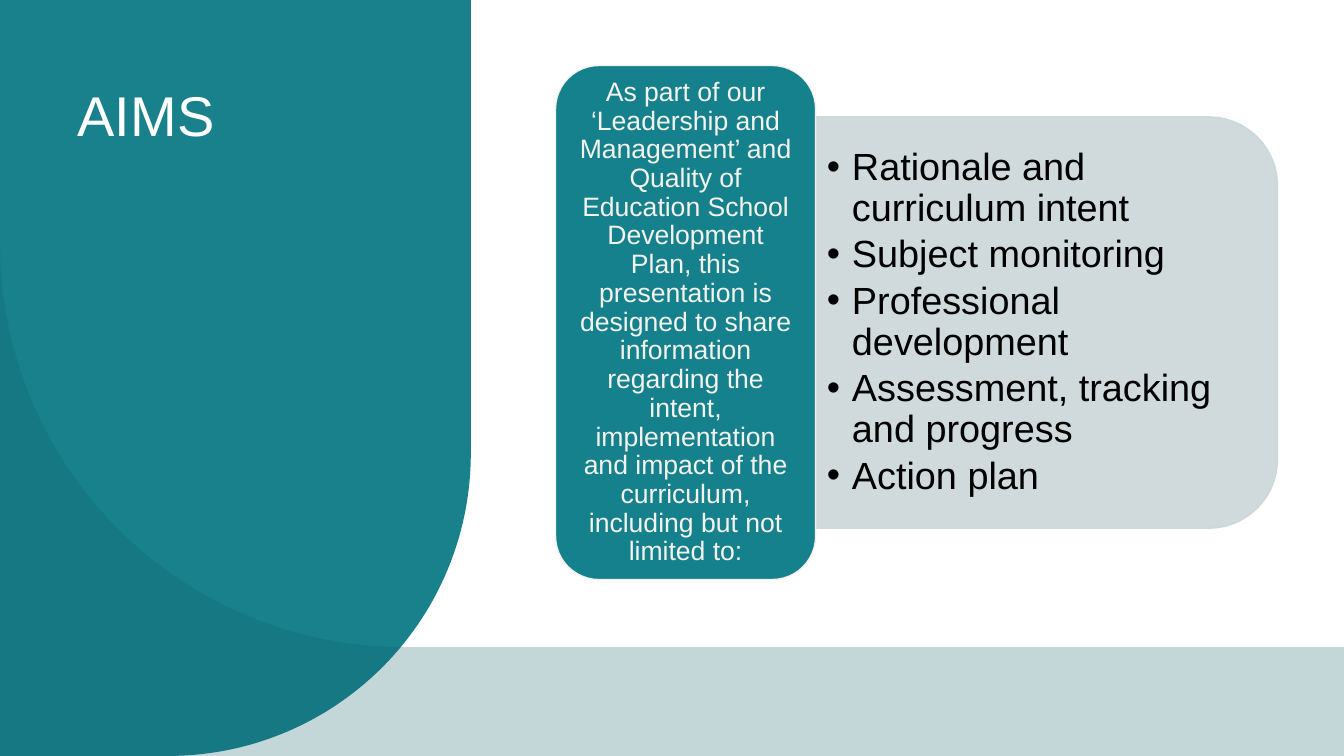
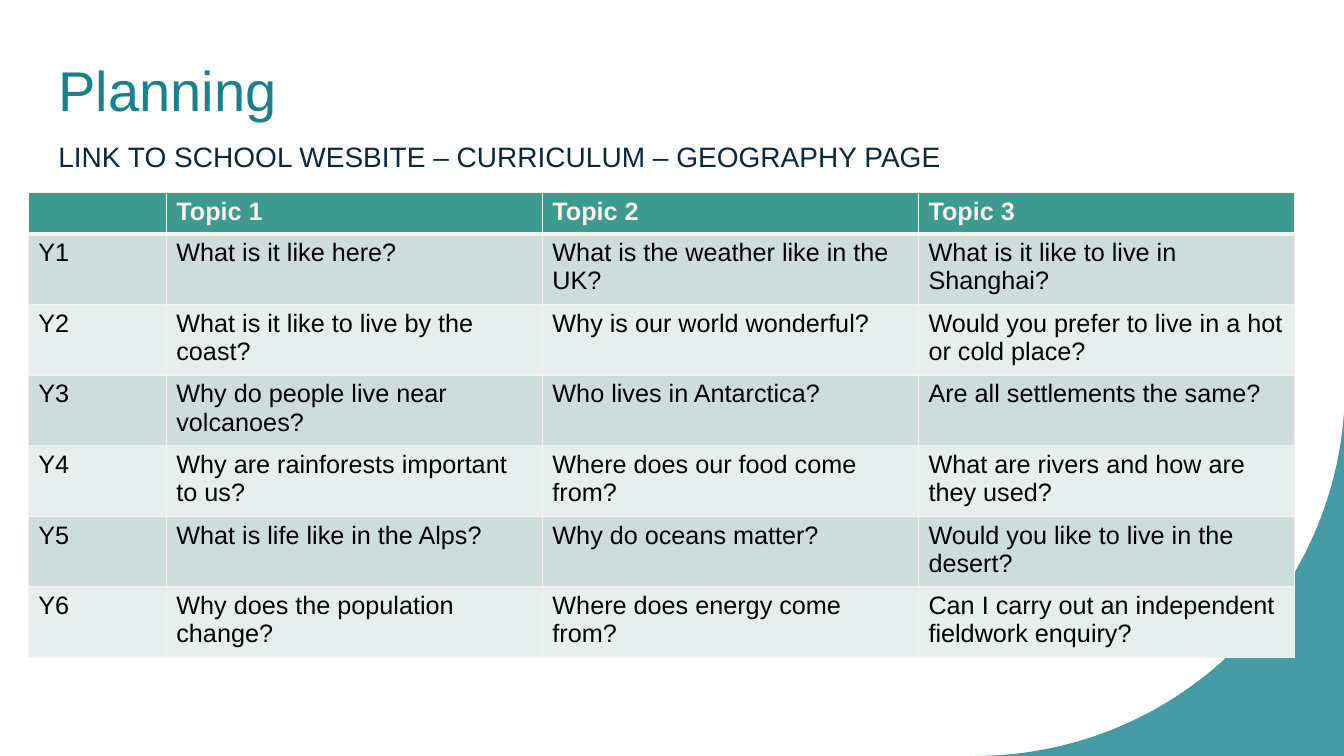
import dataclasses
import math

import lxml.etree
import pptx
import pptx.dml.color
import pptx.enum.shapes
import pptx.enum.text
import pptx.oxml.ns
import pptx.util

Inches = pptx.util.Inches
Pt = pptx.util.Pt
qn = pptx.oxml.ns.qn
Align = pptx.enum.text.PP_ALIGN
Anchor = pptx.enum.text.MSO_ANCHOR
Preset = pptx.enum.shapes.MSO_SHAPE


@dataclasses.dataclass(frozen=True)
class Theme:
    font: str = "Arial"
    white: str = "FFFFFF"
    black: str = "000000"
    teal: str = "18818C"
    dark_teal: str = "116069"
    card: str = "15818C"
    card_line: str = "F3F1EB"
    panel: str = "CBD7DA"
    cream: str = "F4F2EC"
    navy: str = "09283F"
    header: str = "3C9A8F"
    odd_row: str = "CDDDDB"
    even_row: str = "E7EFEE"
    title_size: int = 40
    aims_size: int = 27
    subtitle_size: int = 20
    intro_size: int = 19
    table_size: int = 18


theme = Theme()
WIDTH, HEIGHT = 13.33, 7.5


def paint(shape, colour, alpha=100, line=None):
    """Fill and outline a shape, with alpha as a percentage of opacity."""
    shape.shadow.inherit = False
    shape.fill.solid()
    shape.fill.fore_color.rgb = pptx.dml.color.RGBColor.from_string(colour)
    if line:
        shape.line.color.rgb = pptx.dml.color.RGBColor.from_string(line)
        shape.line.width = Pt(1)
    else:
        shape.line.fill.background()
    if alpha < 100:
        for element in shape._element.spPr.iter(qn("a:srgbClr")):
            lxml.etree.SubElement(element, qn("a:alpha"), val=str(alpha * 1000))


def write_text(frame, lines, size, colour, bold=False, frame_format=None, paragraph_format=None):
    """Write one paragraph per line, applying the format values to frame and paragraphs."""
    for name, value in (frame_format or {}).items():
        setattr(frame, name, value)
    for index, line in enumerate(lines):
        paragraph = frame.add_paragraph() if index else frame.paragraphs[0]
        for name, value in (paragraph_format or {}).items():
            setattr(paragraph, name, value)
        run = paragraph.add_run()
        run.text = line
        for name, value in {"name": theme.font, "size": Pt(size), "bold": bold}.items():
            setattr(run.font, name, value)
        run.font.color.rgb = pptx.dml.color.RGBColor.from_string(colour)


presentation = pptx.Presentation()
presentation.slide_width = Inches(WIDTH)
presentation.slide_height = Inches(HEIGHT)
title_only = presentation.slide_layouts[5]
aims_slide = presentation.slides.add_slide(title_only)
planning_slide = presentation.slides.add_slide(title_only)

# Curved backgrounds: circle centre, radius, arc in degrees, then the closing corners
backgrounds = [
    (aims_slide, (1.67, 4.5), 3, (0, 90), [(0, HEIGHT), (0, 0), (4.67, 0)], theme.teal, 100),
    (aims_slide, (4, 2.42), 4, (180, 90),
     [(WIDTH, 6.42), (WIDTH, HEIGHT), (0, HEIGHT)], theme.dark_teal, 25),
    (planning_slide, (9.67, 3.83), 3.67, (4, 90), [(WIDTH, HEIGHT)], theme.teal, 80),
]
ARC_STEPS = 60
for slide, (centre_x, centre_y), radius, (start, end), corners, colour, alpha in backgrounds:
    angles = [math.radians(start + (end - start) * step / ARC_STEPS) for step in range(ARC_STEPS + 1)]
    arc = [(centre_x + radius * math.cos(angle), centre_y + radius * math.sin(angle)) for angle in angles]
    points = [(Inches(x), Inches(y)) for x, y in arc + corners]
    builder = slide.shapes.build_freeform(*points[0])
    builder.add_line_segments(points[1:], close=True)
    paint(builder.convert_to_shape(), colour, alpha)

# Titles, brought in front of the backgrounds
titles = [
    (aims_slide, "AIMS", (0.67, 0.75, 3.67, 4.25), theme.white, Anchor.TOP),
    (planning_slide, "Planning", (0.48, 0.16, 10.84, 1.45), theme.teal, Anchor.MIDDLE),
]
for slide, text, box, colour, anchor in titles:
    title = slide.shapes.title
    for name, value in zip(("left", "top", "width", "height"), box):
        setattr(title, name, Inches(value))
    write_text(
        title.text_frame, [text], theme.title_size, colour,
        frame_format={"vertical_anchor": anchor, "auto_size": pptx.enum.text.MSO_AUTO_SIZE.NONE},
        paragraph_format={"alignment": Align.LEFT},
    )
    slide.shapes._spTree.append(title._element)

# Aims: bulleted panel beside the introduction card
panel = aims_slide.shapes.add_shape(
    Preset.ROUND_2_SAME_RECTANGLE, Inches(8.34), Inches(0.91), Inches(4.08), Inches(4.58))
panel.rotation = 90
panel.adjustments[0], panel.adjustments[1] = 0.167, 0
paint(panel, theme.panel, 90, theme.panel)

aims = [
    "Rationale and curriculum intent",
    "Subject monitoring",
    "Professional development",
    "Assessment, tracking and progress",
    "Action plan",
]
aims_box = aims_slide.shapes.add_textbox(Inches(8.09), Inches(1.36), Inches(4.38), Inches(3.68))
write_text(
    aims_box.text_frame, aims, theme.aims_size, theme.black,
    frame_format={
        "word_wrap": True, "vertical_anchor": Anchor.MIDDLE,
        "margin_left": Inches(0.11), "margin_right": Inches(0.11),
        "margin_top": Inches(0.06), "margin_bottom": Inches(0.06),
    },
    paragraph_format={"line_spacing": 0.9, "space_before": Pt(4)},
)
aims_box.text_frame.paragraphs[0].space_before = Pt(0)
for paragraph in aims_box.text_frame.paragraphs:
    properties = paragraph._p.get_or_add_pPr()
    properties.set("marL", str(Inches(0.25)))
    properties.set("indent", str(-Inches(0.25)))
    lxml.etree.SubElement(properties, qn("a:buFont"), typeface=theme.font)
    lxml.etree.SubElement(properties, qn("a:buChar"), char="•")

card = aims_slide.shapes.add_shape(
    Preset.ROUNDED_RECTANGLE, Inches(5.51), Inches(0.65), Inches(2.58), Inches(5.1))
card.adjustments[0] = 0.167
paint(card, theme.card, line=theme.card_line)
introduction = (
    "As part of our ‘Leadership and Management’ and Quality of Education School Development Plan, "
    "this presentation is designed to share information regarding the intent, implementation and "
    "impact of the curriculum, including but not limited to:"
)
write_text(
    card.text_frame, [introduction], theme.intro_size, theme.cream,
    frame_format={
        "word_wrap": True, "vertical_anchor": Anchor.MIDDLE,
        "margin_left": Inches(0.08), "margin_right": Inches(0.08),
        "margin_top": Inches(0.04), "margin_bottom": Inches(0.04),
    },
    paragraph_format={"alignment": Align.CENTER, "line_spacing": 0.9},
)

# Planning: subtitle and topic table
subtitle = planning_slide.shapes.add_textbox(Inches(0.48), Inches(1.27), Inches(10.84), Inches(0.6))
write_text(
    subtitle.text_frame, ["LINK TO SCHOOL WESBITE – CURRICULUM – GEOGRAPHY PAGE"],
    theme.subtitle_size, theme.navy,
    frame_format={"word_wrap": True}, paragraph_format={"line_spacing": 1.2},
)

topics = [
    ("", "Topic 1", "Topic 2", "Topic 3"),
    ("Y1", "What is it like here?", "What is the weather like in the UK?",
     "What is it like to live in Shanghai?"),
    ("Y2", "What is it like to live by the coast?", "Why is our world wonderful?",
     "Would you prefer to live in a hot or cold place?"),
    ("Y3", "Why do people live near volcanoes?", "Who lives in Antarctica?",
     "Are all settlements the same?"),
    ("Y4", "Why are rainforests important to us?", "Where does our food come from?",
     "What are rivers and how are they used?"),
    ("Y5", "What is life like in the Alps?", "Why do oceans matter?",
     "Would you like to live in the desert?"),
    ("Y6", "Why does the population change?", "Where does energy come from?",
     "Can I carry out an independent fieldwork enquiry?"),
]
column_widths = [1.37, 3.73, 3.73, 3.73]
row_heights = [0.41] + [0.66] * (len(topics) - 1)
table = planning_slide.shapes.add_table(
    len(topics), len(column_widths), Inches(0.28), Inches(1.91),
    Inches(sum(column_widths)), Inches(sum(row_heights))).table
for column, width in zip(table.columns, column_widths):
    column.width = Inches(width)
for row, height in zip(table.rows, row_heights):
    row.height = Inches(height)

for row_index, texts in enumerate(topics):
    is_header = row_index == 0
    fill = theme.header if is_header else theme.odd_row if row_index % 2 else theme.even_row
    border_widths = {"lnL": 1, "lnR": 1, "lnT": 3 if row_index == 1 else 1, "lnB": 3 if is_header else 1}
    for column_index, text in enumerate(texts):
        cell = table.cell(row_index, column_index)
        properties = cell._tc.get_or_add_tcPr()
        for tag, width in border_widths.items():
            border = lxml.etree.SubElement(properties, qn(f"a:{tag}"), w=str(Pt(width)))
            border_fill = lxml.etree.SubElement(border, qn("a:solidFill"))
            lxml.etree.SubElement(border_fill, qn("a:srgbClr"), val=theme.cream)
        cell.fill.solid()
        cell.fill.fore_color.rgb = pptx.dml.color.RGBColor.from_string(fill)
        if text:
            write_text(cell.text_frame, [text], theme.table_size,
                       theme.cream if is_header else theme.black, bold=is_header)

presentation.save("out.pptx")
